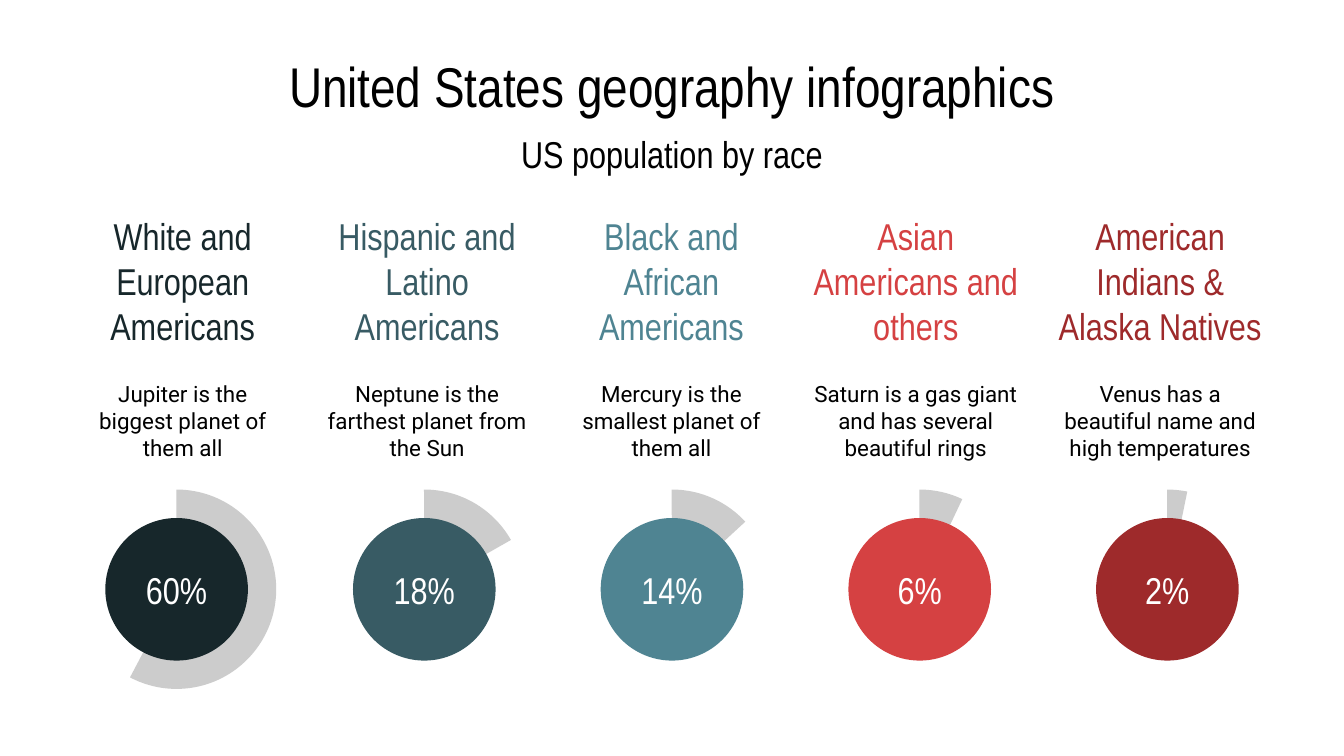
from pptx import Presentation
from pptx.dml.color import RGBColor
from pptx.enum.shapes import MSO_SHAPE as Preset
from pptx.enum.text import MSO_ANCHOR as Anchor, MSO_AUTO_SIZE as AutoSize, PP_ALIGN as Align
from pptx.util import Pt

COLORS = {
    "black": "000000", "white": "FFFFFF", "gray": "CCCCCC",
    "ink": "17272B", "slate": "385B64", "teal": "4F8492",
    "red": "D54142", "crimson": "9E2A2B",
}
HEADING_FONT, BODY_FONT = "Arial Narrow", "Roboto"


def write(shape, text, size, color, font=HEADING_FONT, anchor=Anchor.MIDDLE):
    """Put one centred paragraph in a shape."""
    frame = shape.text_frame
    frame_format = {
        "word_wrap": True, "auto_size": AutoSize.NONE, "vertical_anchor": anchor,
        "margin_left": Pt(7.2), "margin_right": Pt(7.2),
        "margin_top": Pt(7.2), "margin_bottom": Pt(7.2),
    }
    for name, value in frame_format.items():
        setattr(frame, name, value)
    paragraph = frame.paragraphs[0]
    paragraph.alignment = Align.CENTER
    run = paragraph.add_run()
    run.text = text
    run.font.name = font
    run.font.size = Pt(size)
    run.font.color.rgb = RGBColor.from_string(COLORS[color])


def add_solid(preset, left, top, size, color):
    """Add a square-framed shape with a plain fill."""
    shape = slide.shapes.add_shape(preset, Pt(left), Pt(top), Pt(size), Pt(size))
    shape.shadow.inherit = False
    shape.fill.solid()
    shape.fill.fore_color.rgb = RGBColor.from_string(COLORS[color])
    shape.line.fill.background()
    return shape


presentation = Presentation()
presentation.slide_width, presentation.slide_height = Pt(720), Pt(405)
slide = presentation.slides.add_slide(presentation.slide_layouts[5])

# Title and subtitle
title = slide.shapes.title
title_place = {"left": 36, "top": 20.3, "width": 648, "height": 45.4}
for name, value in title_place.items():
    setattr(title, name, Pt(value))
write(title, "United States geography infographics", 30, "black", anchor=Anchor.TOP)
subtitle = slide.shapes.add_textbox(Pt(152), Pt(66.2), Pt(416), Pt(31.7))
write(subtitle, "US population by race", 20, "black")

# Columns: heading, description, share, end angle of the sector, color
columns = [
    ("White and European Americans", "Jupiter is the biggest planet of them all",
     "60%", 117.81, "ink"),
    ("Hispanic and Latino Americans", "Neptune is the farthest planet from the Sun",
     "18%", 330.4, "slate"),
    ("Black and African Americans", "Mercury is the smallest planet of them all",
     "14%", 317.36, "teal"),
    ("Asian Americans and others", "Saturn is a gas giant and has several beautiful rings",
     "6%", 295.29, "red"),
    ("American Indians & Alaska Natives", "Venus has a beautiful name and high temperatures",
     "2%", 281.5, "crimson"),
]
TEXT_LEFT, TEXT_STEP, TEXT_WIDTH = 35.3, 130.9, 125.3
PIE_LEFT, PIE_STEP, PIE_TOP, PIE_SIZE = 41.2, 132.7, 262.3, 106.8
DISC_SIZE = 76.4
DISC_INSET = (PIE_SIZE - DISC_SIZE) / 2
START_ANGLE = 269.85
ADJUST_PER_DEGREE = 0.6  # 60000 units a degree, in units of 100000

for index, (heading, description, share, end_angle, color) in enumerate(columns):
    # Heading and description
    text_left = Pt(TEXT_LEFT + index * TEXT_STEP)
    heading_box = slide.shapes.add_textbox(text_left, Pt(112.3), Pt(TEXT_WIDTH), Pt(76.3))
    write(heading_box, heading, 20, color)
    description_box = slide.shapes.add_textbox(text_left, Pt(198), Pt(TEXT_WIDTH), Pt(54.7))
    write(description_box, description, 12, "black", BODY_FONT)

    # Gray sector behind a disc with the share
    pie_left = PIE_LEFT + index * PIE_STEP
    sector = add_solid(Preset.PIE, pie_left, PIE_TOP, PIE_SIZE, "gray")
    for number, angle in enumerate((end_angle, START_ANGLE)[::-1]):
        sector.adjustments[number] = angle * ADJUST_PER_DEGREE
    disc = add_solid(Preset.OVAL, pie_left + DISC_INSET, PIE_TOP + DISC_INSET, DISC_SIZE, color)
    write(disc, share, 20, "white")

presentation.save("out.pptx")
